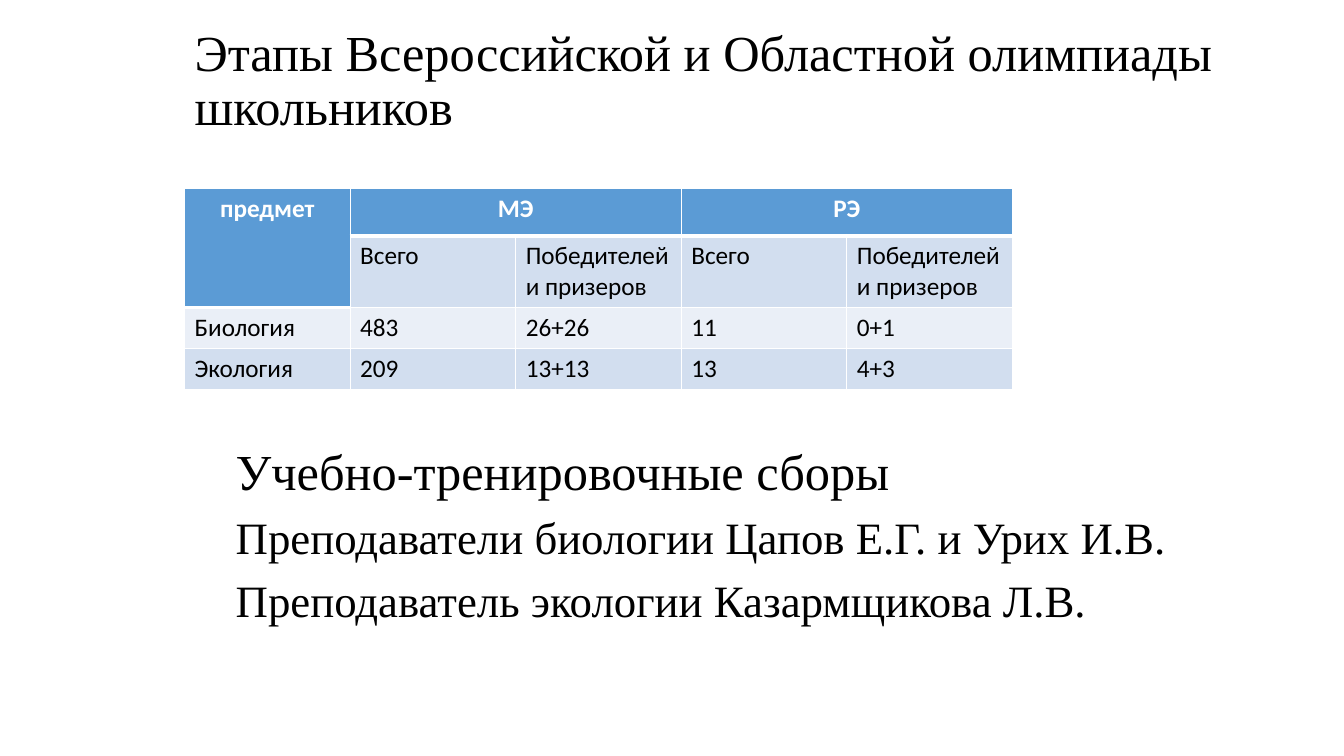
from dataclasses import dataclass

from lxml import etree
from pptx import Presentation
from pptx import util as u
from pptx.dml.color import RGBColor
from pptx.enum import text as tx
from pptx.oxml import ns

BLACK = RGBColor(0x00, 0x00, 0x00)
WHITE = RGBColor(0xFF, 0xFF, 0xFF)
BLUE = RGBColor(0x5B, 0x9B, 0xD5)
MID = RGBColor(0xD2, 0xDE, 0xEF)
PALE = RGBColor(0xEA, 0xEF, 0xF7)
SERIF, SANS = "Times New Roman", "Calibri"

# The slide is a grid of 100 columns by 100 rows
WIDE, HIGH = u.Inches(13.33), u.Inches(7.5)


def col(n: float) -> u.Emu:
    return u.Emu(round(WIDE * n / 100))


def row(n: float) -> u.Emu:
    return u.Emu(round(HIGH * n / 100))


@dataclass
class Box:
    x: float
    y: float
    w: float
    h: float

    def place(self) -> tuple:
        return col(self.x), row(self.y), col(self.w), row(self.h)


@dataclass
class Line:
    words: str
    size: int


@dataclass
class Band:
    height: float
    fill: RGBColor
    words: list[str]


HEAD = Box(13.73, 1.2, 83.33, 19.33)
GRID = Box(13.73, 24.93, 61.6, 26.4)
CAMP = Box(16.8, 58.53, 83.2, 25.33)

TITLE = [Line("Этапы Всероссийской и Областной олимпиады школьников", 36)]
NOTES = [
    Line("Учебно-тренировочные сборы", 36),
    Line("Преподаватели биологии Цапов Е.Г. и Урих И.В.", 32),
    Line("Преподаватель экологии Казармщикова Л.В.", 32),
]
PAIR = ["Всего", "Победителей и призеров"]
BANDS = [
    Band(6.27, BLUE, ["предмет", "МЭ", "", "РЭ", ""]),
    Band(9.33, MID, ["", *PAIR, *PAIR]),
    Band(5.43, PALE, ["Биология", "483", "26+26", "11", "0+1"]),
    Band(5.43, MID, ["Экология", "209", "13+13", "13", "4+3"]),
]
SPANS = [((0, 0), (1, 0)), ((0, 1), (0, 2)), ((0, 3), (0, 4))]


def add_run(para, words: str, size: int, face: str, ink: RGBColor,
            bold: bool = False) -> None:
    run = para.add_run()
    run.text = words
    font = run.font
    font.size, font.name, font.bold = u.Pt(size), face, bold
    font.color.rgb = ink


def write(frame, lines: list[Line]) -> None:
    frame.word_wrap = True
    for i, line in enumerate(lines):
        para = frame.add_paragraph() if i else frame.paragraphs[0]
        para.alignment = tx.PP_ALIGN.LEFT
        para.line_spacing = 0.9
        para.space_before = u.Pt(10 if i else 0)
        add_run(para, line.words, line.size, SERIF, BLACK)


def edge(cell, base: int) -> None:
    """Draw white borders, with the bottom one `base` points wide."""
    props = cell._tc.get_or_add_tcPr()
    for side, pts in (("L", 1), ("R", 1), ("T", 1), ("B", base)):
        line = etree.SubElement(props, ns.qn(f"a:ln{side}"), w=str(u.Pt(pts)))
        fill = etree.SubElement(line, ns.qn("a:solidFill"))
        etree.SubElement(fill, ns.qn("a:srgbClr"), val=str(WHITE))


def add_grid(slide, box: Box, bands: list[Band]) -> None:
    count = len(bands[0].words)
    table = slide.shapes.add_table(len(bands), count, *box.place()).table
    for column in table.columns:
        column.width = col(box.w / count)
    for first, last in SPANS:
        table.cell(*first).merge(table.cell(*last))
    for r, band in enumerate(bands):
        table.rows[r].height = row(band.height)
        for c, words in enumerate(band.words):
            cell = table.cell(r, c)
            top = r == 0 or (r, c) == (1, 0)
            edge(cell, 3 if top else 1)
            cell.fill.solid()
            cell.fill.fore_color.rgb = BLUE if top else band.fill
            if words:
                para = cell.text_frame.paragraphs[0]
                para.alignment = tx.PP_ALIGN.CENTER if top else tx.PP_ALIGN.LEFT
                add_run(para, words, 18, SANS, WHITE if top else BLACK, top)


def main() -> None:
    deck = Presentation()
    deck.slide_width, deck.slide_height = WIDE, HIGH
    slide = deck.slides.add_slide(deck.slide_layouts[5])

    # Title
    title = slide.shapes.title
    title.left, title.top, title.width, title.height = HEAD.place()
    title.text_frame.vertical_anchor = tx.MSO_ANCHOR.MIDDLE
    title.text_frame.auto_size = tx.MSO_AUTO_SIZE.NONE
    write(title.text_frame, TITLE)

    # Results by subject
    add_grid(slide, GRID, BANDS)

    # Training camps
    camp = slide.shapes.add_textbox(*CAMP.place())
    write(camp.text_frame, NOTES)
    camp.text_frame.auto_size = tx.MSO_AUTO_SIZE.SHAPE_TO_FIT_TEXT

    deck.save("out.pptx")


if __name__ == "__main__":
    main()
